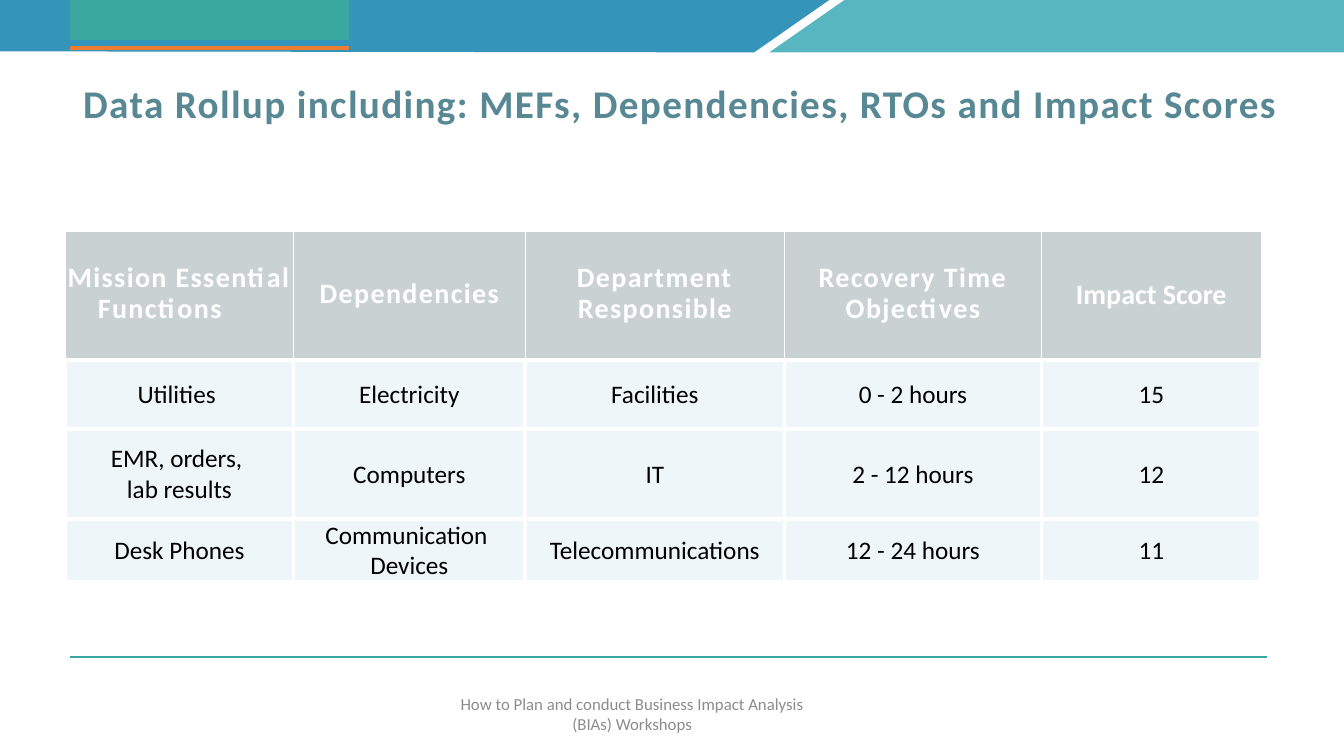
from lxml import etree
from pptx import Presentation
from pptx.dml.color import RGBColor
from pptx.enum.shapes import MSO_CONNECTOR as Connector, MSO_SHAPE as Shape
from pptx.enum.text import MSO_ANCHOR as Anchor, PP_ALIGN as Align
from pptx.oxml.ns import qn
from pptx.util import Inches, Pt

COLORS = {
    "blue": "3494BA", "aqua": "58B6C0", "green": "3AA89E", "orange": "ED7D31",
    "title": "588894", "footer": "8C8C8C", "header": "CAD1D2", "body": "AAD6E7",
    "white": "FFFFFF", "black": "000000",
}
BODY_ALPHA = 20
COLUMN_WIDTHS = [2.26, 2.3, 2.57, 2.55, 2.18]
ROW_HEIGHTS = [1.29, 0.69, 0.89, 0.54]
ROWS = [
    ["Mission Essential Functions", "Dependencies", "Department Responsible",
     "Recovery Time Objectives", "Impact Score"],
    ["Utilities ", "Electricity", "Facilities", "0 - 2 hours", "15"],
    ["EMR, orders, \nlab results", "Computers", "IT", "2 - 12 hours", "12"],
    ["Desk Phones", "Communication \nDevices", "Telecommunications",
     "12 - 24 hours", "11"],
]


class SlideBuilder:
    def __init__(self, slide, font="Calibri"):
        self.slide = slide
        self.shapes = slide.shapes
        self.font = font

    def color(self, name):
        return RGBColor.from_string(COLORS[name])

    def paint(self, shape, color):
        shape.shadow.inherit = False
        shape.fill.solid()
        shape.fill.fore_color.rgb = self.color(color)
        shape.line.fill.background()

    def polygon(self, points, color):
        start, *others = [(Inches(x), Inches(y)) for x, y in points]
        builder = self.shapes.build_freeform(*start)
        builder.add_line_segments(others)
        self.paint(builder.convert_to_shape(), color)

    def rectangle(self, left, top, width, height, color):
        box = map(Inches, (left, top, width, height))
        self.paint(self.shapes.add_shape(Shape.RECTANGLE, *box), color)

    def rule(self, left, right, y, color, width):
        ends = map(Inches, (left, y, right, y))
        line = self.shapes.add_connector(Connector.STRAIGHT, *ends)
        line.line.color.rgb = self.color(color)
        line.line.width = Pt(width)
        etree.SubElement(line._element.spPr, qn("a:effectLst"))

    def add_runs(self, paragraph, text, size, color, bold=False, spacing=0):
        paragraph.alignment = Align.CENTER
        for index, part in enumerate(text.split("\n")):
            if index:
                paragraph.add_line_break()
            run = paragraph.add_run()
            run.text = part
            run.font.name = self.font
            run.font.size = Pt(size)
            run.font.bold = bold
            run.font.color.rgb = self.color(color)
            if spacing:
                run.font._element.set("spc", str(spacing * 100))

    def text(self, left, top, width, height, text, size, color,
             anchor=Anchor.TOP, line_spacing=None, **style):
        box = self.shapes.add_textbox(*map(Inches, (left, top, width, height)))
        frame = box.text_frame
        frame.word_wrap = True
        frame.vertical_anchor = anchor
        paragraph = frame.paragraphs[0]
        self.add_runs(paragraph, text, size, color, **style)
        if line_spacing:
            paragraph.line_spacing = line_spacing

    def borders(self, cell, side_width):
        properties = cell._tc.get_or_add_tcPr()
        widths = {"a:lnL": side_width, "a:lnR": side_width, "a:lnT": 3, "a:lnB": 3}
        for index, (tag, width) in enumerate(widths.items()):
            line = etree.Element(qn(tag), w=str(Pt(width)))
            fill = etree.SubElement(line, qn("a:solidFill"))
            etree.SubElement(fill, qn("a:srgbClr"), val=COLORS["white"])
            properties.insert(index, line)

    def cell(self, cell, text, is_header):
        cell.vertical_anchor = Anchor.MIDDLE
        cell.margin_left = cell.margin_right = cell.margin_top = Inches(0.01)
        cell.margin_bottom = 0
        cell.fill.solid()
        cell.fill.fore_color.rgb = self.color("header" if is_header else "body")
        if not is_header:
            color = cell._tc.tcPr.find(".//" + qn("a:srgbClr"))
            etree.SubElement(color, qn("a:alpha"), val=str(BODY_ALPHA * 1000))
        self.borders(cell, 1 if is_header else 3)
        paragraph = cell.text_frame.paragraphs[0]
        if not is_header:
            self.add_runs(paragraph, text, 18, "black")
        elif text == "Impact Score":
            self.add_runs(paragraph, text, 20, "white", bold=True)
        else:
            self.add_runs(paragraph, text, 20, "white", bold=True, spacing=1)
            paragraph.line_spacing = Pt(22)

    def table(self, left, top, rows, widths, heights):
        box = map(Inches, (left, top, sum(widths), sum(heights)))
        table = self.shapes.add_table(len(rows), len(widths), *box).table
        table.first_row = table.horz_banding = False
        for column, width in zip(table.columns, widths):
            column.width = Inches(width)
        for row, height, texts in zip(table.rows, heights, rows):
            row.height = Inches(height)
            for cell, text in zip(row.cells, texts):
                self.cell(cell, text, is_header=texts is rows[0])
        return table


def main():
    presentation = Presentation()
    presentation.slide_width = Inches(13.33)
    presentation.slide_height = Inches(7.5)
    builder = SlideBuilder(
        presentation.slides.add_slide(presentation.slide_layouts[6]))

    # Top band and rules
    builder.polygon([(0, 0.51), (-0.02, -0.01), (8.24, -0.01), (7.48, 0.52)], "blue")
    builder.polygon([(8.39, -0.01), (13.33, 0), (13.33, 0.52), (7.63, 0.52)], "aqua")
    builder.rectangle(0.69, 0, 2.77, 0.4, "green")
    builder.rule(0.69, 3.46, 0.48, "orange", 3)
    builder.rule(0.69, 12.57, 6.52, "green", 1.75)

    # Rollup table, with a hanging indent in its first heading
    table = builder.table(0.65, 2.28, ROWS, COLUMN_WIDTHS, ROW_HEIGHTS)
    heading = table.cell(0, 0).text_frame.paragraphs[0]
    heading.alignment = Align.LEFT
    indents = heading._p.get_or_add_pPr()
    indents.set("marL", str(Inches(0.31)))
    indents.set("indent", str(Inches(-0.3)))

    # Title and footer
    builder.text(0.65, 0.81, 12.2, 0.85,
                 "Data Rollup including: MEFs, Dependencies, RTOs and Impact Scores",
                 28, "title", line_spacing=0.85, bold=True, spacing=1)
    builder.text(4.38, 6.94, 3.78, 0.29,
                 "How to Plan and conduct Business Impact Analysis (BIAs) Workshops",
                 12, "footer", anchor=Anchor.MIDDLE)

    presentation.save("out.pptx")


if __name__ == "__main__":
    main()
